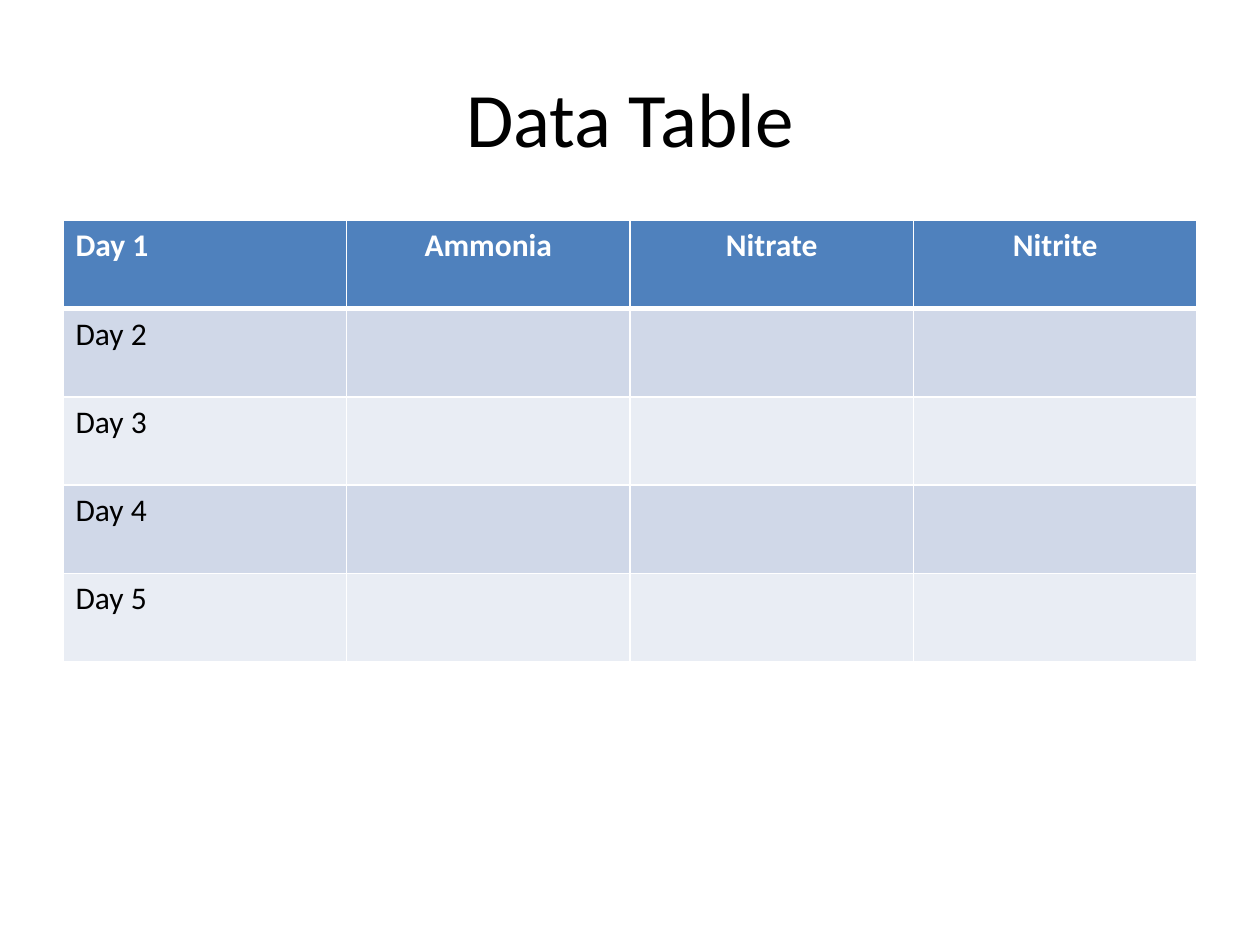
"""Build a slide with an empty water-test data table."""
from lxml import etree
from pptx import Presentation
from pptx.dml.color import RGBColor
from pptx.enum.text import MSO_ANCHOR, PP_ALIGN
from pptx.oxml.ns import qn
from pptx.util import Inches, Pt

LEFT, CENTER = PP_ALIGN.LEFT, PP_ALIGN.CENTER
MIDDLE = MSO_ANCHOR.MIDDLE
COLORS = {"black": "000000", "white": "FFFFFF", "header": "4F81BD",
          "odd": "D0D8E8", "even": "E9EDF4"}
FONT = "Calibri"
ROWS = [["Day 1", "Ammonia", "Nitrate", "Nitrite"]]
ROWS += [[f"Day {day}", "", "", ""] for day in range(2, 6)]


def format_paragraph(paragraph, alignment, size, color, bold):
    paragraph.alignment = alignment
    values = {"name": FONT, "size": Pt(size), "bold": bold}
    for name, value in values.items():
        setattr(paragraph.font, name, value)
    paragraph.font.color.rgb = RGBColor.from_string(COLORS[color])


def add_border(cell, side, width):
    properties = cell._tc.get_or_add_tcPr()
    line = etree.SubElement(properties, qn(f"a:ln{side}"), w=str(Pt(width)))
    fill = etree.SubElement(line, qn("a:solidFill"))
    etree.SubElement(fill, qn("a:srgbClr"), val=COLORS["white"])


presentation = Presentation()
presentation.slide_width = Inches(10)
presentation.slide_height = Inches(7.5)
slide = presentation.slides.add_slide(presentation.slide_layouts[5])

title = slide.shapes.title
title_box = {"left": 0.5, "top": 0.3, "width": 9, "height": 1.25}
for name, value in title_box.items():
    setattr(title, name, Inches(value))
title.text_frame.text = "Data Table"
title.text_frame.vertical_anchor = MIDDLE
format_paragraph(title.text_frame.paragraphs[0], CENTER, 44, "black", False)

table = slide.shapes.add_table(
    len(ROWS), len(ROWS[0]), Inches(0.5), Inches(1.75), Inches(9), Inches(3.5)
).table

for row_index, row in enumerate(ROWS):
    is_header = row_index == 0
    fill_name = "header" if is_header else "odd" if row_index % 2 else "even"
    borders = {"L": 1, "R": 1, "T": 3 if row_index == 1 else 1,
               "B": 3 if is_header else 1}
    for column_index, text in enumerate(row):
        cell = table.cell(row_index, column_index)
        cell.text = text
        format_paragraph(cell.text_frame.paragraphs[0],
                         CENTER if is_header and column_index else LEFT,
                         18, "white" if is_header else "black", is_header)
        for side, width in borders.items():
            add_border(cell, side, width)
        cell.fill.solid()
        cell.fill.fore_color.rgb = RGBColor.from_string(COLORS[fill_name])

presentation.save("out.pptx")
